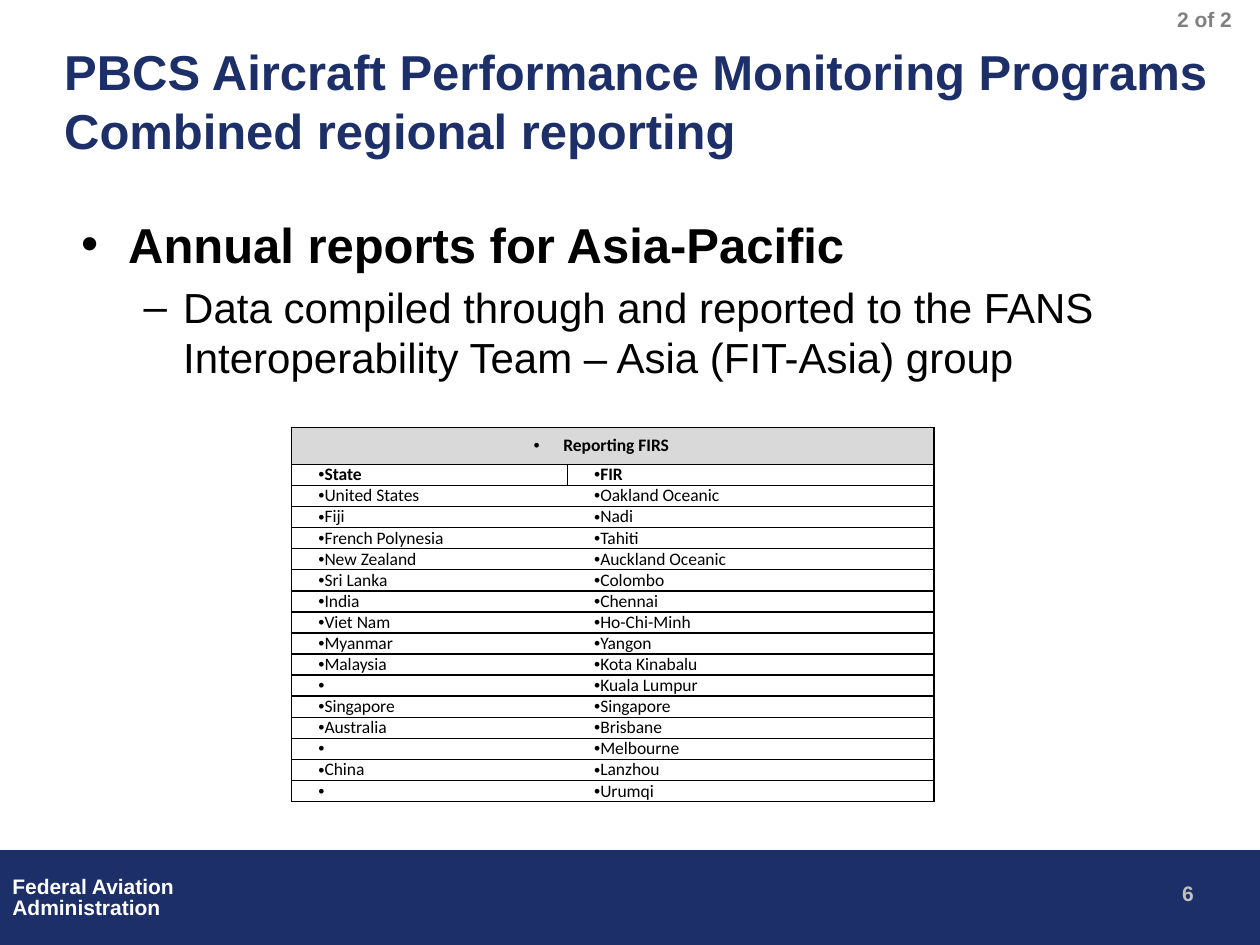
from dataclasses import dataclass

from lxml import etree
from pptx import Presentation
from pptx.dml.color import RGBColor
from pptx.enum import shapes, text
from pptx.oxml.ns import qn
from pptx.util import Cm, Pt

TITLE = ["PBCS Aircraft Performance Monitoring Programs", "Combined regional reporting"]
# text, type size role, bold, left margin, first-line indent, bullet, space before
BODY = [
    ("Annual reports for Asia-Pacific", "large", True, 0.95, -0.95, "•", 0),
    ("Data compiled through and reported to the FANS Interoperability Team – Asia (FIT-Asia) group",
     "medium", False, 2.06, -0.8, "–", 4.8),
]
AGENCY = ["Federal Aviation", "Administration"]
PART = "2 of 2"
PAGE_NUMBER = "6"
TABLE_TITLE = "Reporting FIRS"
TABLE_HEAD = ("State", "FIR")
REGIONS = [
    ("United States", ["Oakland Oceanic"]),
    ("Fiji", ["Nadi"]),
    ("French Polynesia", ["Tahiti"]),
    ("New Zealand", ["Auckland Oceanic"]),
    ("Sri Lanka", ["Colombo"]),
    ("India", ["Chennai"]),
    ("Viet Nam", ["Ho-Chi-Minh"]),
    ("Myanmar", ["Yangon"]),
    ("Malaysia", ["Kota Kinabalu", "Kuala Lumpur"]),
    ("Singapore", ["Singapore"]),
    ("Australia", ["Brisbane", "Melbourne"]),
    ("China", ["Lanzhou", "Urumqi"]),
]


@dataclass(frozen=True)
class Theme:
    navy: str = "1D2F68"
    white: str = "FFFFFF"
    black: str = "000000"
    silver: str = "C0C0C0"
    gray: str = "808080"
    header: str = "D9D9D9"
    font: str = "Arial"
    table_font: str = "Calibri"
    large: int = 28
    medium: int = 24
    small: int = 12
    tiny: int = 10


THEME = Theme()


def rgb(color):
    return RGBColor.from_string(color)


def format_runs(para, size, color, bold=True, font=THEME.font):
    for span in para.runs:
        span.font.name = font
        span.font.size = Pt(size)
        span.font.bold = bold
        span.font.color.rgb = rgb(color)


def set_bullet(para, char, margin, indent):
    props = para._p.get_or_add_pPr()
    props.set("marL", str(Cm(margin)))
    props.set("indent", str(Cm(indent)))
    etree.SubElement(props, qn("a:buFont"), typeface=THEME.font)
    etree.SubElement(props, qn("a:buChar"), char=char)


def place(box, left, top, width, height):
    box.left, box.top, box.width, box.height = Cm(left), Cm(top), Cm(width), Cm(height)


def add_label(page, lines, frame, color, wrap=True, spacing=None):
    box = page.shapes.add_textbox(*map(Cm, frame))
    box.text_frame.word_wrap = wrap
    box.text_frame.text = "\n".join(lines)
    for para in box.text_frame.paragraphs:
        para.line_spacing = spacing
        format_runs(para, THEME.small, color)


def set_borders(cell, sides):
    """Draw the listed sides (L, R, T, B) and clear the others."""
    props = cell._tc.get_or_add_tcPr()
    for side in "LRTB":
        line = etree.SubElement(props, qn(f"a:ln{side}"), w=str(Pt(1)))
        if side in sides:
            fill = etree.SubElement(line, qn("a:solidFill"))
            etree.SubElement(fill, qn("a:srgbClr"), val=THEME.black)
        else:
            etree.SubElement(line, qn("a:noFill"))


def fill_cell(cell, words, sides, bold=False, margin=0, indent=0.36):
    cell.margin_left = cell.margin_right = Cm(0.18)
    cell.margin_top = cell.margin_bottom = 0
    cell.vertical_anchor = text.MSO_ANCHOR.MIDDLE if bold else text.MSO_ANCHOR.BOTTOM
    set_borders(cell, sides)
    cell.fill.background()
    cell.text_frame.text = words
    para = cell.text_frame.paragraphs[0]
    set_bullet(para, "•", margin, indent)
    format_runs(para, THEME.tiny, THEME.black, bold, THEME.table_font)


def add_region_table(page):
    rows = [(state if i == 0 else " ", fir)
            for state, firs in REGIONS for i, fir in enumerate(firs)]
    title_height, row_height = 0.74, 0.42
    widths = (5.56, 7.39)
    count = len(rows) + 2
    frame = page.shapes.add_table(
        count, 2, Cm(5.88), Cm(8.62), Cm(sum(widths)),
        Cm(title_height + row_height * (count - 1)))
    table = frame.table
    table.first_row = table.horz_banding = False
    for column, width in zip(table.columns, widths):
        column.width = Cm(width)
    for i, row in enumerate(table.rows):
        row.height = Cm(row_height if i else title_height)

    banner = table.cell(0, 0)
    banner.merge(table.cell(0, 1))
    fill_cell(banner, TABLE_TITLE, "LRTB", True, 0.13, -0.6)
    set_borders(table.cell(0, 1), "RTB")
    banner.fill.solid()
    banner.fill.fore_color.rgb = rgb(THEME.header)
    banner.text_frame.paragraphs[0].alignment = text.PP_ALIGN.CENTER

    for r, values in enumerate([TABLE_HEAD] + rows, start=1):
        is_head = r == 1
        for c, words in enumerate(values):
            sides = "LRTB" if is_head else ("LTB", "RTB")[c]
            fill_cell(table.cell(r, c), words, sides, is_head)


def add_footer(page):
    band = page.shapes.add_shape(
        shapes.MSO_SHAPE.RECTANGLE, 0, Cm(17.15), Cm(25.4), Cm(1.9))
    band.shadow.inherit = False
    band.fill.solid()
    band.fill.fore_color.rgb = rgb(THEME.navy)
    band.line.color.rgb = rgb(THEME.navy)
    band.line.width = Pt(0.75)
    add_label(page, AGENCY, (0, 17.56, 3.81, 1.12), THEME.white, wrap=False, spacing=0.85)
    add_label(page, [PAGE_NUMBER], (23.58, 17.63, 1.52, 0.76), THEME.silver)


def fill_title(box):
    place(box, 1.04, 0.88, 23.88, 2.29)
    frame = box.text_frame
    frame.auto_size = text.MSO_AUTO_SIZE.NONE
    frame.vertical_anchor = text.MSO_ANCHOR.MIDDLE
    para = frame.paragraphs[0]
    para.alignment = text.PP_ALIGN.LEFT
    for i, line in enumerate(TITLE):
        if i:
            para.add_line_break()
        para.add_run().text = line
    format_runs(para, THEME.large, THEME.navy)


def fill_body(box):
    place(box, 1.38, 4.19, 22.35, 12.19)
    frame = box.text_frame
    frame.auto_size = text.MSO_AUTO_SIZE.NONE
    frame.text = "\n".join(item[0] for item in BODY)
    for level, (para, item) in enumerate(zip(frame.paragraphs, BODY)):
        _, size, bold, margin, indent, char, before = item
        para.level = level
        para.space_before = Pt(before)
        set_bullet(para, char, margin, indent)
        format_runs(para, getattr(THEME, size), THEME.black, bold)


def main():
    deck = Presentation()
    deck.slide_width, deck.slide_height = Cm(25.4), Cm(19.05)
    page = deck.slides.add_slide(deck.slide_layouts[1])
    add_footer(page)
    fill_title(page.shapes.title)
    fill_body(page.placeholders[1])
    add_label(page, [PART], (23.48, 0, 1.92, 0.76), THEME.gray)
    add_region_table(page)
    deck.save("out.pptx")


if __name__ == "__main__":
    main()
